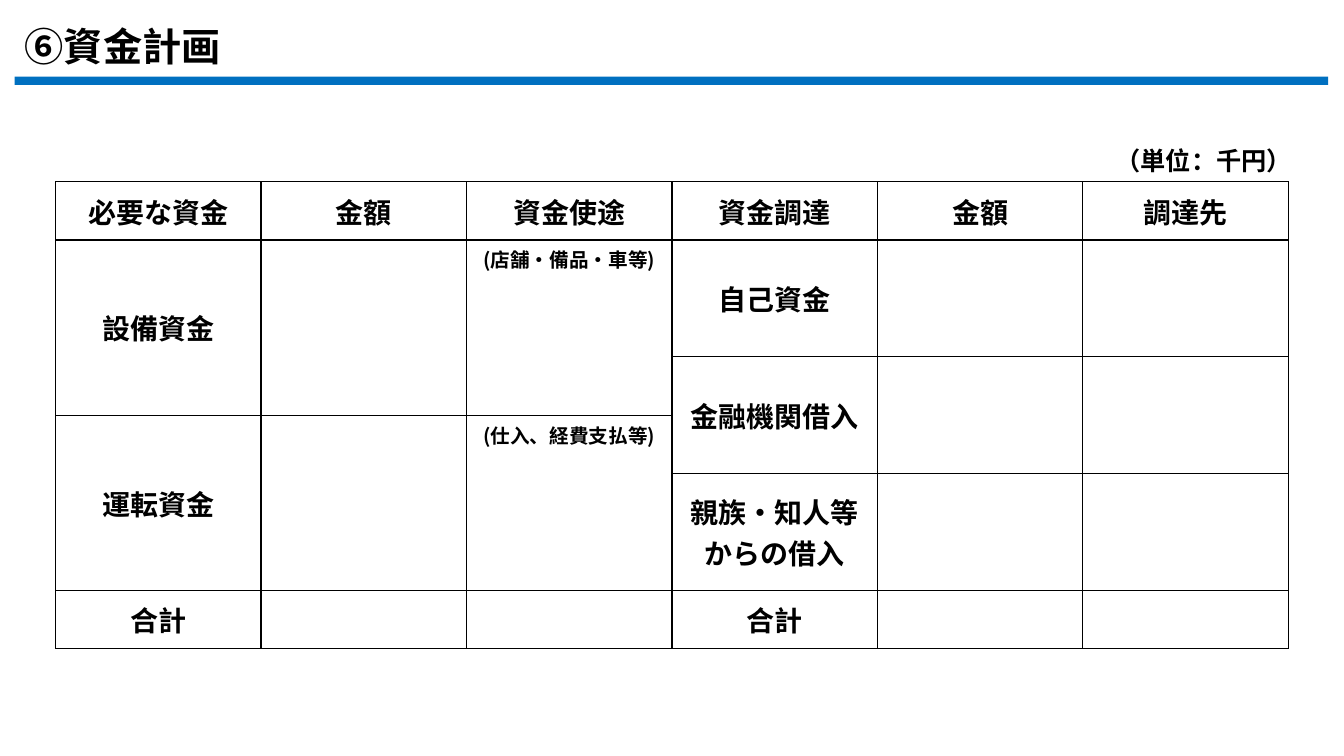
from lxml.etree import SubElement
from pptx import Presentation
from pptx.dml.color import RGBColor
from pptx.enum.shapes import MSO_SHAPE
from pptx.enum.text import MSO_ANCHOR as ANCHOR, PP_ALIGN as ALIGN
from pptx.oxml.ns import qn
from pptx.util import Pt

PX = 9525
FONT = "Noto Sans CJK JP"
BLACK = RGBColor(0x00, 0x00, 0x00)
WHITE = RGBColor(0xFF, 0xFF, 0xFF)
BLUE = RGBColor(0x00, 0x70, 0xC0)

HEADERS = ["必要な資金", "金額", "資金使途", "資金調達", "金額", "調達先"]
ROW_UNITS = [1, 2, 1, 1, 2, 1]
LABELS = {
    (1, 0): "設備資金",
    (3, 0): "運転資金",
    (5, 0): "合計",
    (1, 3): "自己資金",
    (2, 3): "金融機関借入",
    (4, 3): "親族・知人等からの借入",
    (5, 3): "合計",
}
HINTS = {(1, 2): "(店舗・備品・車等)", (3, 2): "(仕入、経費支払等)"}
MERGE_STARTS = {1: range(0, 3), 2: range(3, 6), 3: range(0, 3)}


def scaled(box):
    """Turn a box in px into EMU."""
    return [length * PX for length in box]


def write(tf, text, size, align=ALIGN.LEFT):
    """Write one bold black paragraph into a text frame."""
    p = tf.paragraphs[0]
    p.text = text
    p.alignment = align
    p.font.size = Pt(size)
    p.font.bold = True
    p.font.name = FONT
    p.font.color.rgb = BLACK
    defaults = p._p.pPr.find(qn("a:defRPr"))
    SubElement(defaults, qn("a:ea"), typeface=FONT)


def style_cell(cell):
    """Give a cell thin black borders and a white fill."""
    tcPr = cell._tc.get_or_add_tcPr()
    for side in ("lnL", "lnR", "lnT", "lnB"):
        ln = SubElement(tcPr, qn(f"a:{side}"), w=str(Pt(1)))
        fill = SubElement(ln, qn("a:solidFill"))
        SubElement(fill, qn("a:srgbClr"), val=str(BLACK))
    cell.fill.solid()
    cell.fill.fore_color.rgb = WHITE


def add_heading(s, box):
    """Place the title with the blue rule below it."""
    left, top, width, height = box
    title = s.shapes.title
    title.left, title.top, title.width, title.height = scaled(box)
    title.text_frame.vertical_anchor = ANCHOR.MIDDLE
    write(title.text_frame, "⑥資金計画", 28)
    rule = s.shapes.add_shape(
        MSO_SHAPE.RECTANGLE, *scaled((left, top + height + 2, width, 8)))
    rule.shadow.inherit = False
    rule.fill.solid()
    rule.fill.fore_color.rgb = BLUE
    rule.line.fill.background()


def add_unit_note(s, box):
    """Place the note on the currency unit."""
    tf = s.shapes.add_textbox(*scaled(box)).text_frame
    tf.word_wrap = True
    write(tf, "（単位：千円）", 18)


def add_funding_table(s, box):
    """Place the table of required funds and their sources."""
    left, top, width, height = scaled(box)
    table = s.shapes.add_table(
        len(ROW_UNITS), len(HEADERS), left, top, width, height).table
    table.first_row = False
    table.horz_banding = False
    for column in table.columns:
        column.width = width // len(HEADERS)
    for row, units in zip(table.rows, ROW_UNITS):
        row.height = height * units // sum(ROW_UNITS)
    for cell in table.iter_cells():
        style_cell(cell)
    for row, columns in MERGE_STARTS.items():
        for col in columns:
            table.cell(row, col).merge(table.cell(row + 1, col))
    headers = {(0, col): text for col, text in enumerate(HEADERS)}
    for (row, col), text in (headers | LABELS).items():
        cell = table.cell(row, col)
        cell.vertical_anchor = ANCHOR.MIDDLE
        write(cell.text_frame, text, 20, ALIGN.CENTER)
    for (row, col), text in HINTS.items():
        write(table.cell(row, col).text_frame, text, 14, ALIGN.CENTER)


def main():
    """Build the funding plan slide."""
    prs = Presentation()
    prs.slide_width, prs.slide_height = scaled((1280, 720))
    s = prs.slides.add_slide(prs.slide_layouts[5])
    add_heading(s, (14, 16, 1251, 55))
    add_funding_table(s, (53, 173, 1174, 445))
    add_unit_note(s, (1053, 134, 189, 38))
    prs.save("out.pptx")


if __name__ == "__main__":
    main()
